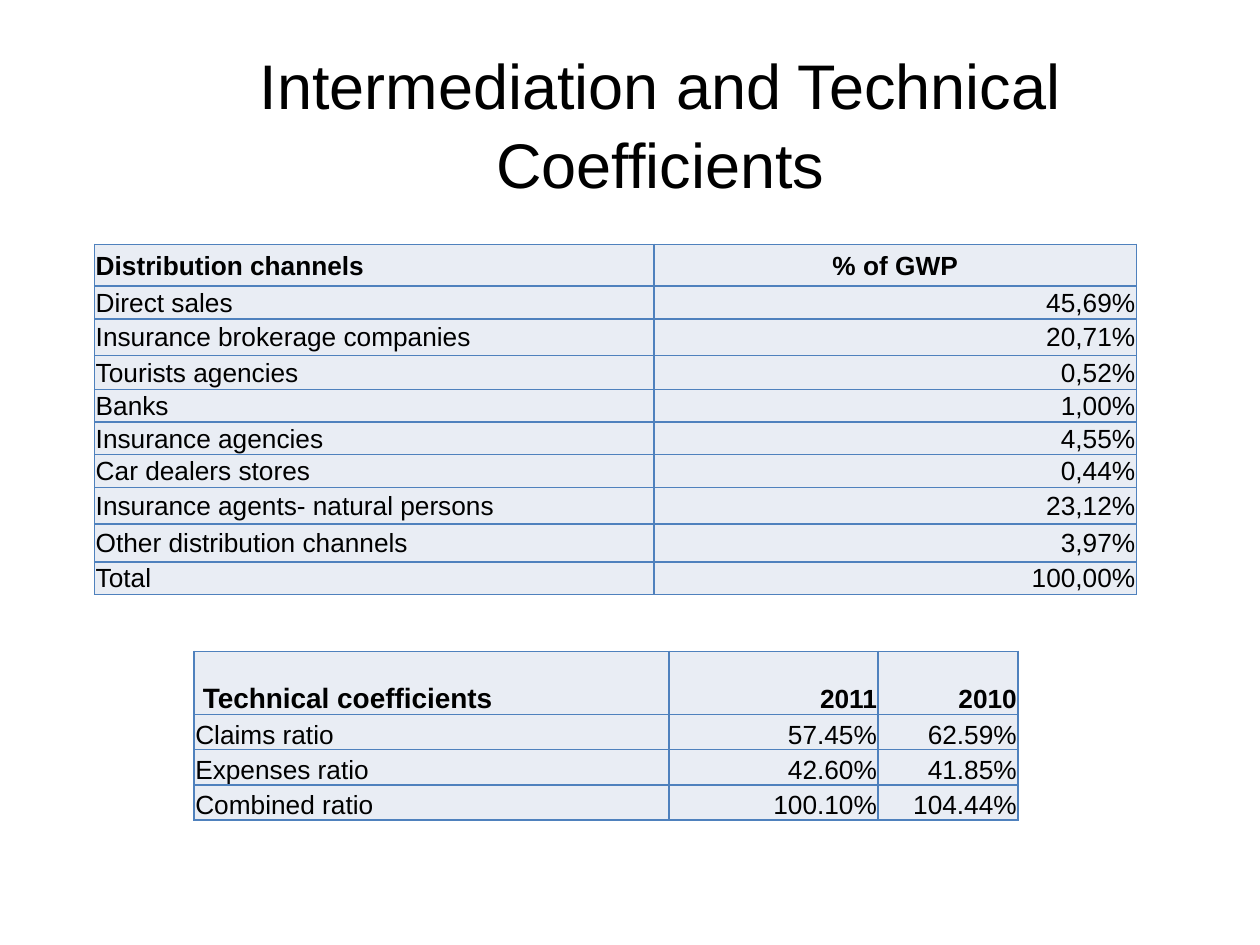
from dataclasses import dataclass
from typing import Any

from lxml import etree
from pptx import Presentation, util as u
from pptx.dml.color import RGBColor
from pptx.enum import text
from pptx.oxml.ns import qn

# The slide is a fine grid: 1000 columns by 750 rows of 0.01 inch
WIDTH, HEIGHT = u.Inches(10), u.Inches(7.5)
COLUMNS, ROWS = 1000, 750
LEFT, CENTER, RIGHT = (text.PP_ALIGN.LEFT, text.PP_ALIGN.CENTER,
                       text.PP_ALIGN.RIGHT)


@dataclass(frozen=True)
class Theme:
    font: str = "Arial"
    ink: str = "000000"
    cell: str = "E9EDF4"
    border: str = "4F81BD"
    title_size: float = 36
    head_size: float = 16
    body_size: float = 15
    border_width: float = 1
    title_spacing: float = 1.05


@dataclass(frozen=True)
class TableBlock:
    left: int
    top: int
    column_widths: tuple[int, ...]
    row_heights: tuple[int, ...]
    rows: tuple[tuple[str, ...], ...]
    anchor: Any
    value_head_align: Any
    label_head_size: float
    label_head_indent: int


THEME = Theme()
TITLE = "Intermediation and Technical Coefficients"

CHANNELS = TableBlock(
    left=75, top=194, column_widths=(444, 383),
    row_heights=(33, 26, 29, 27, 26, 26, 26, 29, 30, 26),
    rows=(
        ("Distribution channels", "% of GWP"),
        ("Direct sales", "45,69%"),
        ("Insurance brokerage companies", "20,71%"),
        ("Tourists agencies", "0,52%"),
        ("Banks", "1,00%"),
        ("Insurance agencies", "4,55%"),
        ("Car dealers stores", "0,44%"),
        ("Insurance agents- natural persons", "23,12%"),
        ("Other distribution channels", "3,97%"),
        ("Total", "100,00%"),
    ),
    anchor=text.MSO_ANCHOR.MIDDLE, value_head_align=CENTER,
    label_head_size=THEME.body_size, label_head_indent=1,
)

COEFFICIENTS = TableBlock(
    left=154, top=517, column_widths=(377, 166, 111),
    row_heights=(50, 28, 28, 28),
    rows=(
        ("Technical coefficients", "2011", "2010"),
        ("Claims ratio", "57.45%", "62.59%"),
        ("Expenses ratio", "42.60%", "41.85%"),
        ("Combined ratio", "100.10%", "104.44%"),
    ),
    anchor=text.MSO_ANCHOR.BOTTOM, value_head_align=RIGHT,
    label_head_size=THEME.head_size, label_head_indent=7,
)


def across(columns: int) -> int:
    return WIDTH * columns // COLUMNS


def down(rows: int) -> int:
    return HEIGHT * rows // ROWS


def apply(target: Any, values: dict[str, Any]) -> None:
    for name, value in values.items():
        setattr(target, name, value)


def write(paragraph: Any, words: str, size: float, align: Any,
          bold: bool = False) -> None:
    paragraph.text = words
    paragraph.alignment = align
    apply(paragraph.runs[0].font,
          {"name": THEME.font, "size": u.Pt(size), "bold": bold})
    paragraph.runs[0].font.color.rgb = RGBColor.from_string(THEME.ink)


def add_borders(cell: Any) -> None:
    properties = cell._tc.get_or_add_tcPr()
    for side in ("a:lnL", "a:lnR", "a:lnT", "a:lnB"):
        line = etree.SubElement(properties, qn(side),
                                w=str(u.Pt(THEME.border_width)))
        fill = etree.SubElement(line, qn("a:solidFill"))
        etree.SubElement(fill, qn("a:srgbClr"), val=THEME.border)


def add_title(slide: Any) -> None:
    box = slide.shapes.add_textbox(across(75), down(29), across(898), down(131))
    box.text_frame.word_wrap = True
    paragraph = box.text_frame.paragraphs[0]
    write(paragraph, TITLE, THEME.title_size, CENTER)
    paragraph.line_spacing = THEME.title_spacing


def add_table(slide: Any, block: TableBlock) -> None:
    table = slide.shapes.add_table(
        len(block.rows), len(block.column_widths),
        across(block.left), down(block.top),
        across(sum(block.column_widths)), down(sum(block.row_heights))).table
    apply(table, {"first_row": False, "horz_banding": False})
    for column, width in zip(table.columns, block.column_widths):
        column.width = across(width)
    for row, height in zip(table.rows, block.row_heights):
        row.height = down(height)

    for i, words in enumerate(block.rows):
        for j, word in enumerate(words):
            cell = table.cell(i, j)
            head, label = i == 0, j == 0
            indent = block.label_head_indent if head and label else 1
            size = block.label_head_size if head and label else THEME.body_size
            value_align = block.value_head_align if head else RIGHT
            apply(cell, {
                "margin_left": across(indent), "margin_right": across(1),
                "margin_top": down(1), "margin_bottom": 0,
                "vertical_anchor": block.anchor,
            })
            add_borders(cell)
            cell.fill.solid()
            cell.fill.fore_color.rgb = RGBColor.from_string(THEME.cell)
            write(cell.text_frame.paragraphs[0], word, size,
                  LEFT if label else value_align, bold=head)


def main() -> None:
    presentation = Presentation()
    apply(presentation, {"slide_width": WIDTH, "slide_height": HEIGHT})
    slide = presentation.slides.add_slide(presentation.slide_layouts[6])
    # Tables first, title on top
    for block in (CHANNELS, COEFFICIENTS):
        add_table(slide, block)
    add_title(slide)
    presentation.save("out.pptx")


if __name__ == "__main__":
    main()
